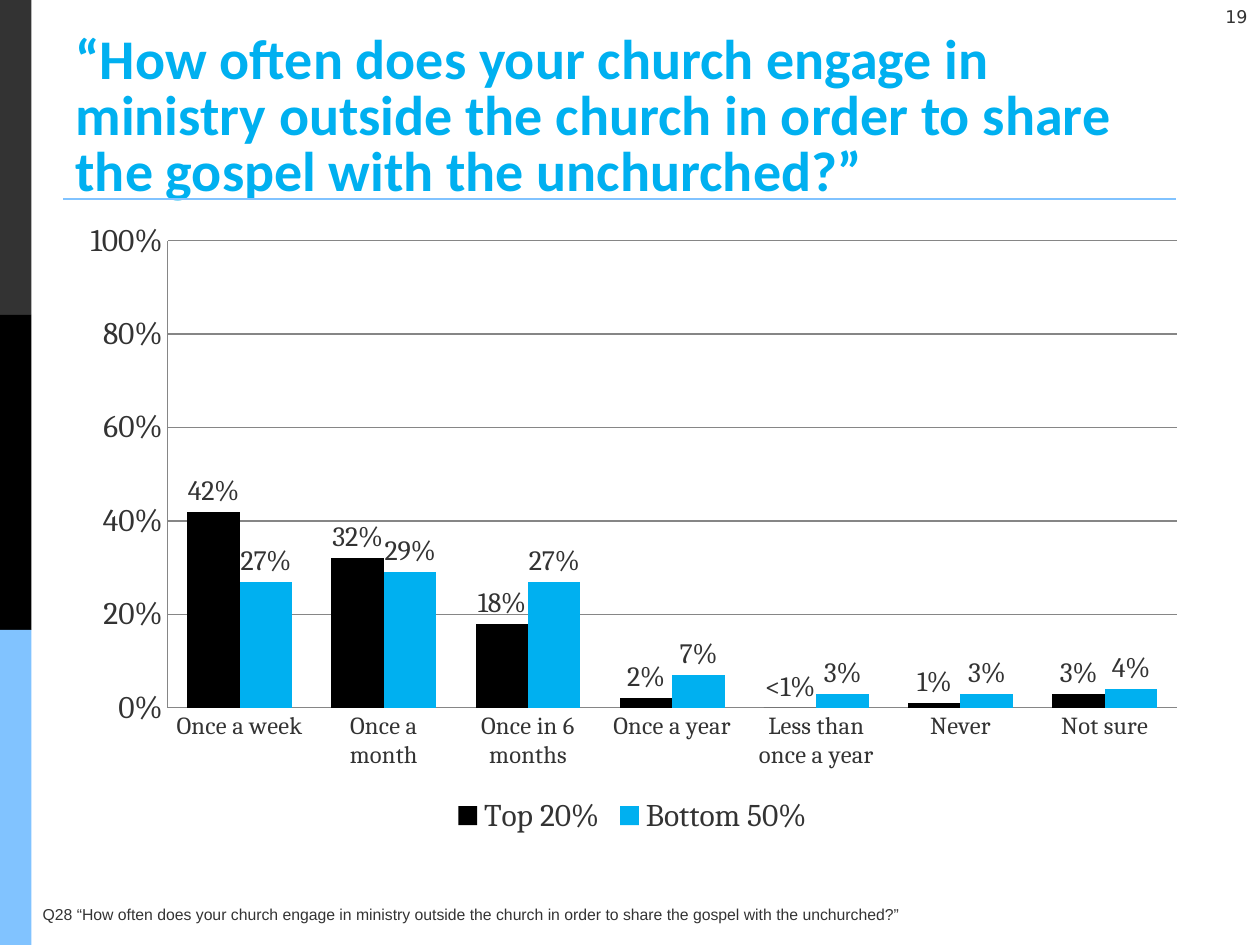
from lxml import etree
from pptx import Presentation
from pptx.chart.data import CategoryChartData as Data
from pptx.dml.color import RGBColor as RGB
from pptx.enum.chart import XL_CHART_TYPE as Kind, XL_LABEL_POSITION as Spot
from pptx.enum.chart import XL_LEGEND_POSITION as Side, XL_TICK_MARK as Tick
from pptx.enum.shapes import MSO_CONNECTOR as Conn, MSO_SHAPE as Shape
from pptx.enum.text import MSO_ANCHOR as Anchor, PP_ALIGN as Align
from pptx.oxml.ns import qn
from pptx.util import Inches, Pt

COLORS = {"dark": "333333", "black": "000000", "pale": "81C3FF",
          "blue": "00B0F0", "grid": "868686"}
ASK = ("“How often does your church engage in ministry outside the church "
       "in order to share the gospel with the unchurched?”")


def color(name):
    return RGB.from_string(COLORS[name])


def style(font, face, size, name="dark", bold=False):
    font.name, font.size, font.bold = face, Pt(size), bold
    font.color.rgb = color(name)


deck = Presentation()
deck.slide_width, deck.slide_height = Inches(10), Inches(7.5)
slide = deck.slides.add_slide(deck.slide_layouts[5])
shapes = slide.shapes

for i, name in enumerate(["dark", "black", "pale"]):
    band = shapes.add_shape(Shape.RECTANGLE, 0, Inches(2.5 * i), Inches(0.25), Inches(2.5))
    band.shadow.inherit = False
    band.fill.solid()
    band.fill.fore_color.rgb = color(name)
    band.line.fill.background()

rule = shapes.add_connector(Conn.STRAIGHT, Inches(0.5), Inches(1.58), Inches(9.33), Inches(1.58))
rule.line.color.rgb = color("pale")
rule.line.width = Pt(1.5)
etree.SubElement(rule._element.spPr, qn("a:effectLst"))

title = shapes.title
title.left, title.top = Inches(0.5), Inches(0.41)
title.width, title.height = Inches(8.82), Inches(1.25)
frame = title.text_frame
frame.text = ASK
frame.word_wrap = True
frame.vertical_anchor = Anchor.BOTTOM
head = frame.paragraphs[0]
head.alignment = Align.LEFT
head.line_spacing = Pt(32)
style(head.font, "Calibri", 32, "blue", True)

notes = [("19", 9.5, 0, 0.5, 0.33, "DejaVu Sans", 10, Align.RIGHT),
         ("Q28 " + ASK, 0.24, 7.13, 7.48, 0.25, "Arial", 9, Align.LEFT)]
for text, x, y, w, h, face, size, align in notes:
    frame = shapes.add_textbox(Inches(x), Inches(y), Inches(w), Inches(h)).text_frame
    frame.word_wrap = True
    frame.text = text
    para = frame.paragraphs[0]
    para.alignment = align
    style(para.font, face, size)

data = Data(number_format="0%")
data.categories = ["Once a week", "Once a month", "Once in 6 months", "Once a year",
                   "Less than once a year", "Never", "Not sure"]
data.add_series("Top 20%", [0.42, 0.32, 0.18, 0.02, 0, 0.01, 0.03])
data.add_series("Bottom 50%", [0.27, 0.29, 0.27, 0.07, 0.03, 0.03, 0.04])
chart = shapes.add_chart(Kind.COLUMN_CLUSTERED, Inches(0.52), Inches(1.66),
                         Inches(9), Inches(5.01), data).chart
style(chart.font, "Cambria", 18)
chart.has_title = False
chart.has_legend = True
chart.legend.position = Side.BOTTOM
chart.legend.include_in_layout = False

cats, vals = chart.category_axis, chart.value_axis
for axis in (cats, vals):
    axis.major_tick_mark = axis.minor_tick_mark = Tick.NONE
    axis.format.line.color.rgb = color("grid")
    axis.format.line.width = Pt(0.75)
style(cats.tick_labels.font, "Cambria", 14)
vals.minimum_scale, vals.maximum_scale, vals.major_unit = 0, 1, 0.2
vals.tick_labels.number_format = "0%"
vals.tick_labels.number_format_is_linked = False
vals.has_major_gridlines = True
vals.major_gridlines.format.line.color.rgb = color("grid")
vals.major_gridlines.format.line.width = Pt(0.75)

plot = chart.plots[0]
plot.gap_width, plot.overlap = 75, 0
plot.vary_by_categories = False
for bars, name in zip(plot.series, ["black", "blue"]):
    bars.format.fill.solid()
    bars.format.fill.fore_color.rgb = color(name)
    tags = bars.data_labels
    tags.show_value = True
    tags.number_format = "0%"
    tags.number_format_is_linked = False
    tags.position = Spot.OUTSIDE_END
    style(tags.font, "Cambria", 16)

tag = plot.series[0].points[4].data_label
tag.text_frame.text = "<1%"
tag.position = Spot.OUTSIDE_END
style(tag.text_frame.paragraphs[0].runs[0].font, "Cambria", 16)

area = chart._chartSpace.chart.plotArea
for old in area.findall(qn("c:layout")):
    area.remove(old)
layout = etree.Element(qn("c:layout"))
area.insert(0, layout)
manual = etree.SubElement(layout, qn("c:manualLayout"))
for key, val in [("layoutTarget", "inner"), ("xMode", "edge"), ("yMode", "edge"),
                 ("x", "0.09"), ("y", "0.05"), ("w", "0.89"), ("h", "0.74")]:
    etree.SubElement(manual, qn("c:" + key)).set("val", val)

deck.save("out.pptx")
